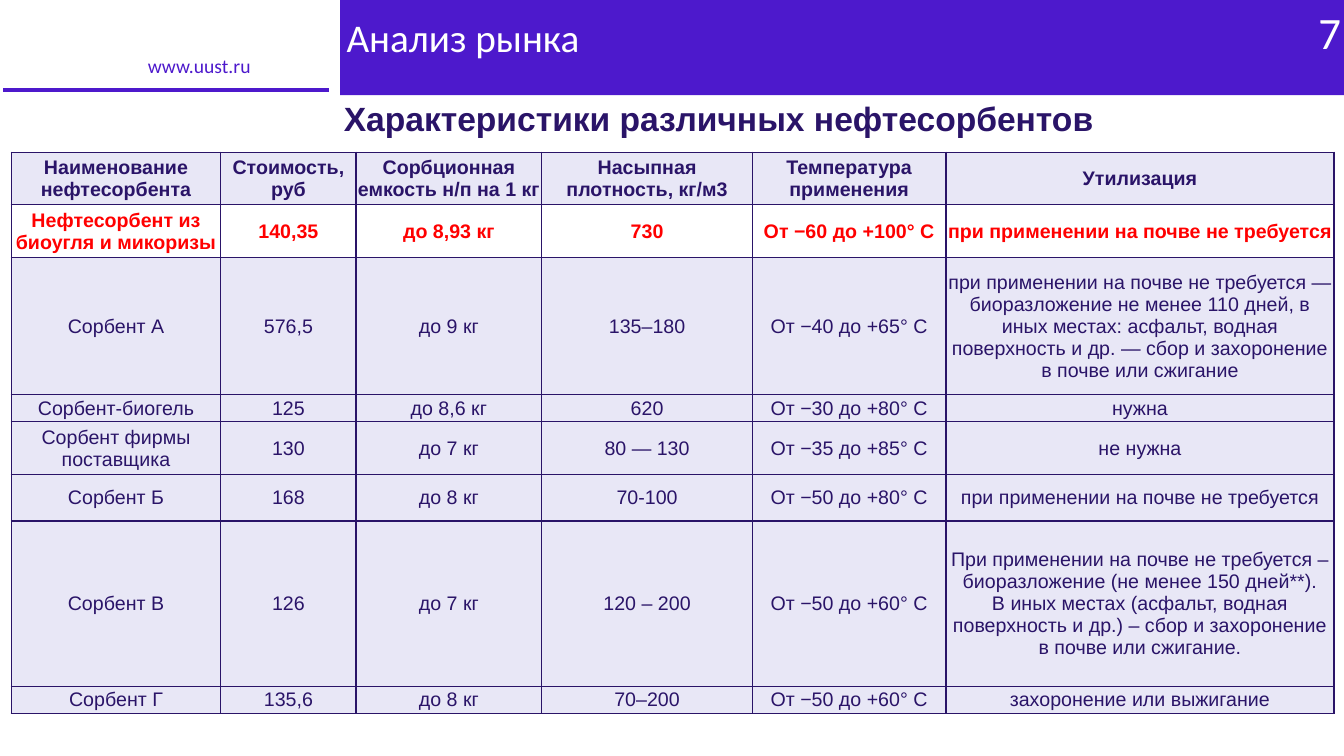
from copy import deepcopy

from lxml import etree
from pptx import Presentation
from pptx.dml.color import RGBColor
from pptx.enum import shapes, text
from pptx.oxml.ns import qn
from pptx.util import Pt

COLORS = {
    "violet": "4D19CC",
    "navy": "2A1468",
    "lavender": "E8E7F6",
    "red": "FF0000",
    "white": "FFFFFF",
}


def rgb(name):
    return RGBColor.from_string(COLORS[name])


def write(tf, content, color, align, **font):
    """Fill a text frame with one formatted paragraph."""
    tf.word_wrap = True
    p = tf.paragraphs[0]
    p.text = content
    p.alignment = align
    for r in p.runs:
        for key, value in font.items():
            setattr(r.font, key, value)
        r.font.color.rgb = rgb(color)
    for br in p._p.findall(qn("a:br")):
        br.append(deepcopy(p.runs[0]._r.rPr))
    return p


prs = Presentation()
prs.slide_width, prs.slide_height = Pt(960), Pt(540)
s = prs.slides.add_slide(prs.slide_layouts[6])
LEFT, CENTER, RIGHT = text.PP_ALIGN.LEFT, text.PP_ALIGN.CENTER, text.PP_ALIGN.RIGHT
TOP, MIDDLE = text.MSO_ANCHOR.TOP, text.MSO_ANCHOR.MIDDLE

# Header band and the rule under the site address
for box, outlined in [((243, 0, 717, 68), False), ((0, 60.5, 237.6, 7.2), True)]:
    sp = s.shapes.add_shape(shapes.MSO_SHAPE.RECTANGLE, *map(Pt, box))
    sp.shadow.inherit = False
    sp.fill.solid()
    sp.fill.fore_color.rgb = rgb("violet")
    if outlined:
        sp.line.color.rgb = rgb("white")
        sp.line.width = Pt(4.5)
    else:
        sp.line.fill.background()

# Address, title, page number and table heading
labels = [
    ("www.uust.ru", (98.6, 38.2, 112.3, 19.4), "violet", LEFT, MIDDLE, 0.9,
     {"size": Pt(14), "name": "Calibri"}),
    ("Анализ рынка", (240.5, 12.2, 713.5, 33.1), "white", LEFT, MIDDLE, 0.9,
     {"size": Pt(28), "name": "Calibri"}),
    ("7", (934.6, 0, 25.2, 46), "white", RIGHT, TOP, 1.0,
     {"size": Pt(32), "name": "Calibri"}),
    ("Характеристики различных нефтесорбентов", (190, 66.2, 646.6, 36), "navy",
     CENTER, TOP, 1.0, {"size": Pt(24), "name": "Arial", "bold": True}),
]
for content, box, color, align, anchor, spacing, font in labels:
    tf = s.shapes.add_textbox(*map(Pt, box)).text_frame
    tf.vertical_anchor = anchor
    write(tf, content, color, align, **font).line_spacing = spacing

# Sorbent table
rows = [
    ("Наименование нефтесорбента", "Стоимость, руб", "Сорбционная емкость н/п на 1 кг",
     "Насыпная плотность, кг/м3", "Температура применения", "Утилизация"),
    ("Нефтесорбент из биоугля и микоризы", "140,35", "до 8,93 кг", "730",
     "От −60 до +100° С", "при применении на почве не требуется"),
    ("Сорбент А", "576,5", "до 9 кг", "135–180", "От −40 до +65° С",
     "при применении на почве не требуется — биоразложение не менее 110 дней, "
     "в иных местах: асфальт, водная поверхность и др. — сбор и захоронение "
     "в почве или сжигание"),
    ("Сорбент-биогель", "125", "до 8,6 кг", "620", "От −30 до +80° С", "нужна"),
    ("Сорбент фирмы поставщика", "130", "до 7 кг", "80 — 130", "От −35 до +85° С",
     "не нужна"),
    ("Сорбент Б", "168", "до 8 кг", "70-100", "От −50 до +80° С",
     "при применении на почве не требуется"),
    ("Сорбент В", "126", "до 7 кг", "120 – 200", "От −50 до +60° С",
     "При применении на почве не требуется – биоразложение (не менее 150 дней**).\n"
     "В иных местах (асфальт, водная поверхность и др.) – сбор и захоронение "
     "в почве или сжигание."),
    ("Сорбент Г", "135,6", "до 8 кг", "70–200", "От −50 до +60° С",
     "захоронение или выжигание"),
]
col_widths = [149.8, 96.5, 132.8, 150.4, 138.3, 277.2]
row_heights = [37.6, 37.6, 98, 19.3, 37.6, 33.4, 118, 19.3]
margins = {"margin_left": Pt(0.7), "margin_right": Pt(0.7),
           "margin_top": Pt(0.7), "margin_bottom": Pt(0)}

table = s.shapes.add_table(len(rows), len(col_widths), Pt(8), Pt(108.7),
                           Pt(sum(col_widths)), Pt(sum(row_heights))).table
table.first_row = table.horz_banding = False
for column, width in zip(table.columns, col_widths):
    column.width = Pt(width)
for row, height in zip(table.rows, row_heights):
    row.height = Pt(height)

for i, row in enumerate(rows):
    # The header is bold; the team's own sorbent is bold red on white
    own = i == 1
    for j, content in enumerate(row):
        cell = table.cell(i, j)
        write(cell.text_frame, content, "red" if own else "navy", CENTER,
              size=Pt(14), name="Arial", bold=i < 2)
        cell.vertical_anchor = MIDDLE
        for key, value in margins.items():
            setattr(cell, key, value)
        # Borders precede the fill in the cell properties
        tcPr = cell._tc.get_or_add_tcPr()
        for side in ("a:lnL", "a:lnR", "a:lnT", "a:lnB"):
            ln = etree.SubElement(tcPr, qn(side), w=str(Pt(1)))
            line_fill = etree.SubElement(ln, qn("a:solidFill"))
            etree.SubElement(line_fill, qn("a:srgbClr"), val=COLORS["navy"])
        cell.fill.solid()
        cell.fill.fore_color.rgb = rgb("white" if own else "lavender")

prs.save("out.pptx")
